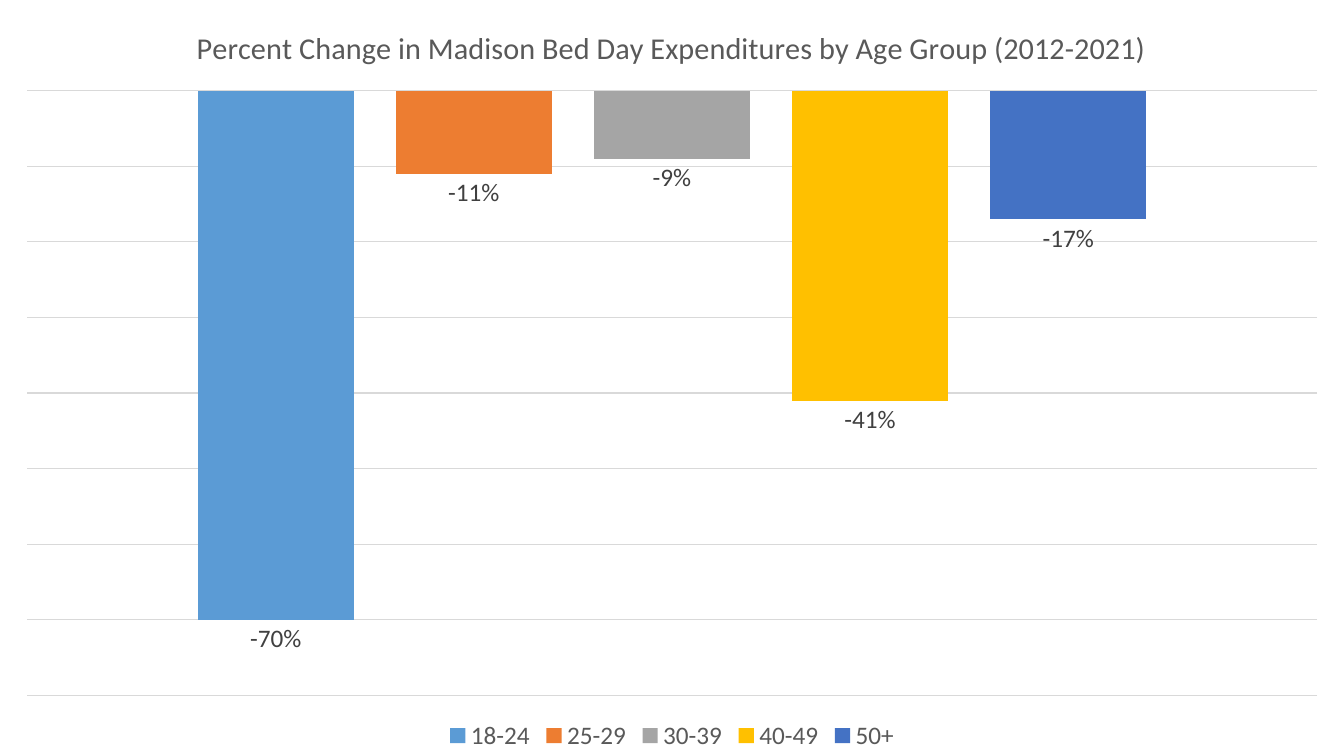
from lxml import etree
from pptx import Presentation
from pptx import util as u
from pptx.chart.data import CategoryChartData
from pptx.dml.color import RGBColor
from pptx.enum import chart as ch
from pptx.oxml.ns import qn

TITLE = "Percent Change in Madison Bed Day Expenditures by Age Group (2012-2021)"
AGE_GROUPS = [
    ("18-24", -0.70, "5B9BD5"),
    ("25-29", -0.11, "ED7D31"),
    ("30-39", -0.09, "A5A5A5"),
    ("40-49", -0.41, "FFC000"),
    ("50+", -0.17, "4472C4"),
]


def rgb(value):
    return RGBColor.from_string(value)


def style_font(font, size, color):
    font.name = "Calibri"
    font.size = u.Pt(size)
    font.bold = False
    font.color.rgb = rgb(color)


def set_plot_layout(chart, x, y, w, h):
    area = chart._chartSpace.chart.plotArea
    for old in area.findall(qn("c:layout")):
        area.remove(old)
    layout = etree.Element(qn("c:layout"))
    manual = etree.SubElement(layout, qn("c:manualLayout"))
    settings = [("layoutTarget", "inner"), ("xMode", "edge"), ("yMode", "edge"),
                ("x", x), ("y", y), ("w", w), ("h", h)]
    for tag, value in settings:
        etree.SubElement(manual, qn("c:" + tag)).set("val", str(value))
    area.insert(0, layout)


def style_axes(chart):
    chart.category_axis.visible = False
    axis = chart.value_axis
    axis.visible = False
    axis.minimum_scale = -0.8
    axis.maximum_scale = 0
    axis.major_unit = 0.1
    axis.tick_labels.number_format = "0%"
    axis.tick_labels.number_format_is_linked = False
    axis.has_major_gridlines = True
    line = axis.major_gridlines.format.line
    line.color.rgb = rgb("D9D9D9")
    line.width = u.Pt(0.75)


def style_series(plot):
    plot.gap_width = 219
    plot.overlap = -27
    plot.vary_by_categories = False
    for series, (_, _, color) in zip(plot.series, AGE_GROUPS):
        series.invert_if_negative = False
        series.format.fill.solid()
        series.format.fill.fore_color.rgb = rgb(color)
        labels = series.data_labels
        labels.show_value = True
        labels.number_format = "0%"
        labels.number_format_is_linked = False
        labels.position = ch.XL_LABEL_POSITION.OUTSIDE_END
        style_font(labels.font, 18, "404040")


def add_expenditure_chart(s, x, y, w, h):
    data = CategoryChartData(number_format="0%")
    data.categories = ["1"]
    for name, change, _ in AGE_GROUPS:
        data.add_series(name, [change])
    chart = s.shapes.add_chart(
        ch.XL_CHART_TYPE.COLUMN_CLUSTERED,
        u.Inches(x), u.Inches(y), u.Inches(w), u.Inches(h), data).chart
    style_font(chart.font, 18, "000000")

    chart.has_title = True
    p = chart.chart_title.text_frame.paragraphs[0]
    p.text = TITLE
    style_font(p.runs[0].font, 21.6, "595959")
    chart.chart_title.include_in_layout = False

    chart.has_legend = True
    chart.legend.position = ch.XL_LEGEND_POSITION.BOTTOM
    chart.legend.include_in_layout = False
    style_font(chart.legend.font, 18, "595959")

    style_axes(chart)
    style_series(chart.plots[0])
    set_plot_layout(chart, 0.02, 0.12, 0.96, 0.8)


def main():
    prs = Presentation()
    prs.slide_width = u.Inches(13.33)
    prs.slide_height = u.Inches(7.5)
    s = prs.slides.add_slide(prs.slide_layouts[6])
    add_expenditure_chart(s, 0, 0, 13.33, 7.5)
    prs.save("out.pptx")


if __name__ == "__main__":
    main()
